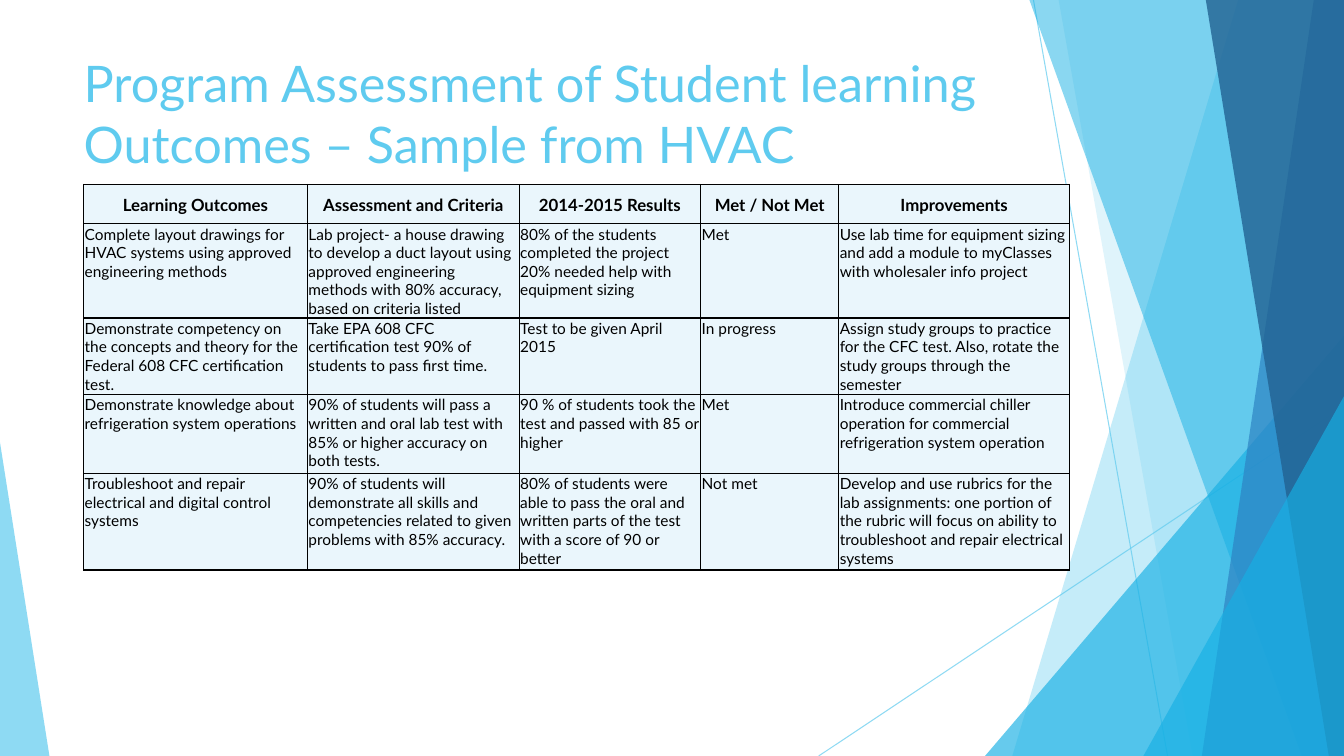
from lxml import etree
from pptx import Presentation
from pptx.dml.color import RGBColor
from pptx.enum.shapes import MSO_CONNECTOR, MSO_SHAPE
from pptx.enum.text import MSO_ANCHOR, PP_ALIGN
from pptx.oxml.ns import qn
from pptx.util import Inches, Pt

STRAIGHT = MSO_CONNECTOR.STRAIGHT
TRIANGLE = MSO_SHAPE.ISOSCELES_TRIANGLE
TOP, MIDDLE = MSO_ANCHOR.TOP, MSO_ANCHOR.MIDDLE
LEFT, CENTER = PP_ALIGN.LEFT, PP_ALIGN.CENTER
FONT = "Lato"
WIDE, HIGH = 13.33, 7.5
SKY, CYAN, BLUE, NAVY = "5FCBEF", "17B0E4", "2E83C3", "226292"
BLACK, PALE = "000000", "EAF6FC"

RAYS = [(10.25, 0, 11.58, HIGH), (WIDE, 4.03, 8.12, HIGH)]
BACK = [(12.28, 10.04, SKY, 36), (10.5, 11.83, SKY, 20)]
FRONT = [(10.21, 12.91, CYAN, 50), (13.03, 11.92, BLUE, 70), (11.96, 13.18, NAVY, 80)]

COLS = [2.22, 2.1, 1.8, 1.37, 2.29]
ROWS = [0.39, 0.93, 0.76, 0.78, 0.96]
CELLS = [
    ["Learning Outcomes", "Assessment and Criteria", "2014-2015 Results",
     "Met / Not Met", "Improvements"],
    ["Complete layout drawings for HVAC systems using approved engineering methods",
     "Lab project- a house drawing to develop a duct layout using approved "
     "engineering methods with 80% accuracy, based on criteria listed",
     "80% of the students completed the project 20% needed help with equipment sizing",
     "Met",
     "Use lab time for equipment sizing and add a module to myClasses "
     "with wholesaler info project"],
    ["Demonstrate competency on the concepts and theory for the Federal 608 CFC "
     "certification test.",
     "Take EPA 608 CFC certification test 90% of students to pass first time.",
     "Test to be given April 2015",
     "In progress",
     "Assign study groups to practice for the CFC test. Also, rotate the study "
     "groups through the semester"],
    ["Demonstrate knowledge about refrigeration system operations",
     "90% of students will pass a written and oral lab test with 85% or higher "
     "accuracy on both tests.",
     "90 % of students took the test and passed with 85 or higher",
     "Met",
     "Introduce commercial chiller operation for commercial refrigeration "
     "system operation"],
    ["Troubleshoot and repair electrical and digital control systems",
     "90% of students will demonstrate all skills and competencies related to "
     "given problems with 85% accuracy.",
     "80% of students were able to pass the oral and written parts of the test "
     "with a score of 90 or better",
     "Not met",
     "Develop and use rubrics for the lab assignments: one portion of the rubric "
     "will focus on ability to troubleshoot and repair electrical systems"],
]


def tint(code):
    return RGBColor.from_string(code)


def fade(item, alpha):
    for tone in item.iter(qn("a:srgbClr")):
        etree.SubElement(tone, qn("a:alpha"), val=str(alpha * 1000))


def paint(shape, color, alpha):
    shape.shadow.inherit = False
    shape.fill.solid()
    shape.fill.fore_color.rgb = tint(color)
    shape.line.fill.background()
    fade(shape.element.spPr, alpha)


def add_ray(slide, ends):
    ray = slide.shapes.add_connector(STRAIGHT, *map(Inches, ends))
    ray.line.color.rgb = tint(SKY)
    ray.line.width = Pt(0.75)
    props = ray.element.spPr
    fade(props, 70)
    etree.SubElement(props, qn("a:effectLst"))


def add_band(slide, top, foot, color, alpha):
    pen = slide.shapes.build_freeform(Inches(top), 0)
    edge = [(WIDE, 0), (WIDE, HIGH), (foot, HIGH)]
    pen.add_line_segments([(Inches(x), Inches(y)) for x, y in edge])
    paint(pen.convert_to_shape(), color, alpha)


def add_peak(slide, left, width, height, tip, color, alpha):
    box = (left, HIGH - height, width, height)
    peak = slide.shapes.add_shape(TRIANGLE, *map(Inches, box))
    peak.adjustments[0] = tip
    paint(peak, color, alpha)


def add_decor(slide):
    for ends in RAYS:
        add_ray(slide, ends)
    for band in BACK:
        add_band(slide, *band)
    add_peak(slide, WIDE - 3.56, 3.56, 4.17, 1, CYAN, 66)
    for band in FRONT:
        add_band(slide, *band)
    add_peak(slide, WIDE - 1.99, 1.99, 3.57, 1, CYAN, 66)
    add_peak(slide, 0, 0.49, 3.11, 0, SKY, 70)


def style(para, size, color, bold, align):
    para.alignment = align
    font = para.font
    font.name, font.size, font.bold = FONT, Pt(size), bold
    font.color.rgb = tint(color)


def set_title(slide, left, top, width, height):
    title = slide.shapes.title
    title.left, title.top = Inches(left), Inches(top)
    title.width, title.height = Inches(width), Inches(height)
    frame = title.text_frame
    frame.text = "Program Assessment of Student learning Outcomes – Sample from HVAC"
    frame.word_wrap = True
    frame.vertical_anchor = TOP
    style(frame.paragraphs[0], 36, SKY, False, LEFT)


def add_edges(cell):
    props = cell._tc.get_or_add_tcPr()
    for side in ("lnL", "lnR", "lnT", "lnB"):
        edge = etree.SubElement(props, qn("a:" + side), w=str(Pt(1)))
        fill = etree.SubElement(edge, qn("a:solidFill"))
        etree.SubElement(fill, qn("a:srgbClr"), val=BLACK)


def fill_cell(cell, text, head):
    add_edges(cell)
    cell.fill.solid()
    cell.fill.fore_color.rgb = tint(PALE)
    cell.margin_left = cell.margin_right = cell.margin_top = Inches(0.01)
    cell.margin_bottom = 0
    cell.vertical_anchor = MIDDLE if head else TOP
    cell.text = text
    style(cell.text_frame.paragraphs[0], 12 if head else 11, BLACK, head,
          CENTER if head else LEFT)


def add_grid(slide, left, top):
    box = (left, top, sum(COLS), sum(ROWS))
    grid = slide.shapes.add_table(len(ROWS), len(COLS), *map(Inches, box)).table
    for col, width in zip(grid.columns, COLS):
        col.width = Inches(width)
    for row, height, texts in zip(grid.rows, ROWS, CELLS):
        row.height = Inches(height)
        for cell, text in zip(row.cells, texts):
            fill_cell(cell, text, texts is CELLS[0])


def main():
    deck = Presentation()
    deck.slide_width, deck.slide_height = Inches(WIDE), Inches(HIGH)
    slide = deck.slides.add_slide(deck.slide_layouts[5])
    add_decor(slide)
    set_title(slide, 0.73, 0.47, 9.4, 1.44)
    add_grid(slide, 0.83, 1.83)
    deck.save("out.pptx")


if __name__ == "__main__":
    main()
